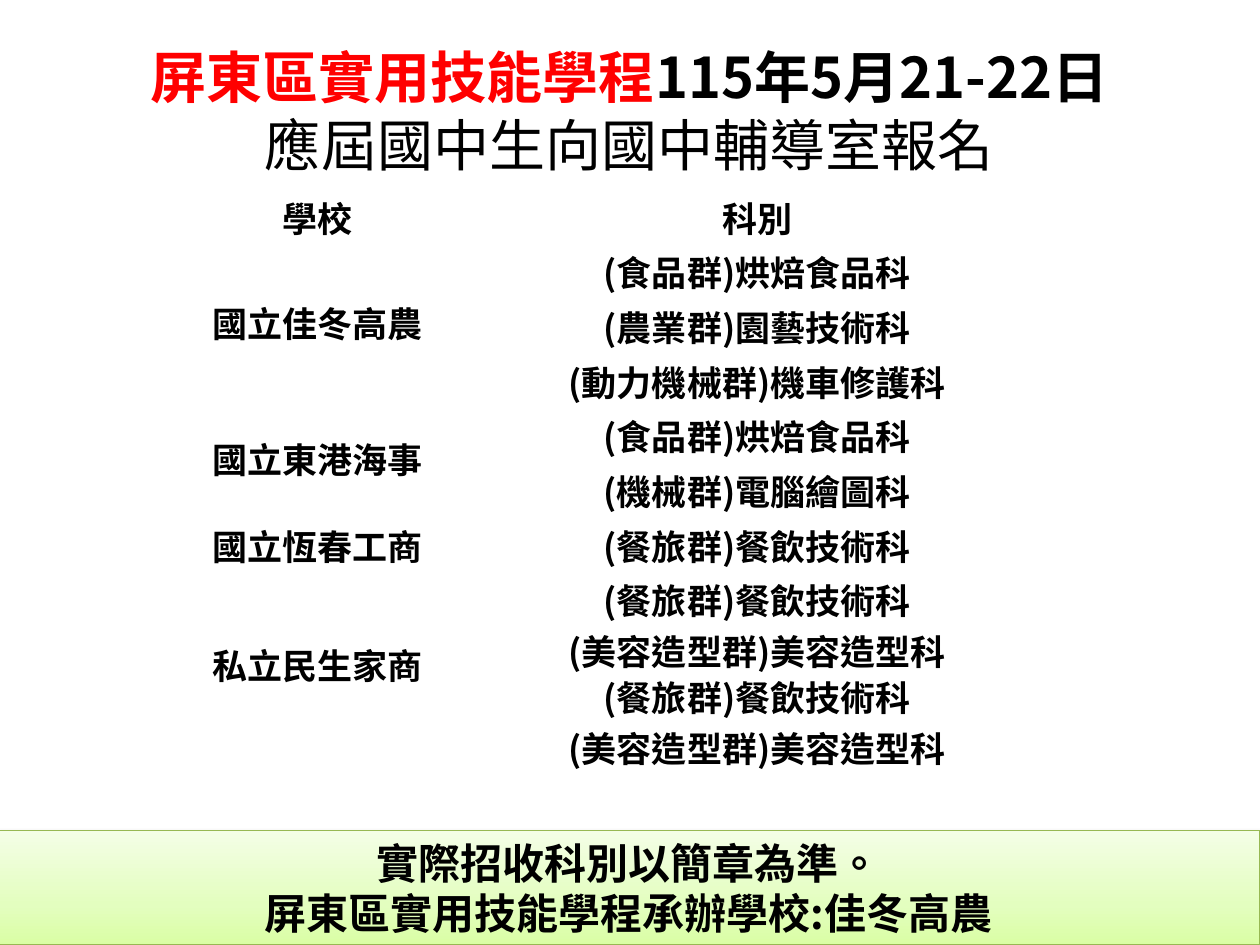
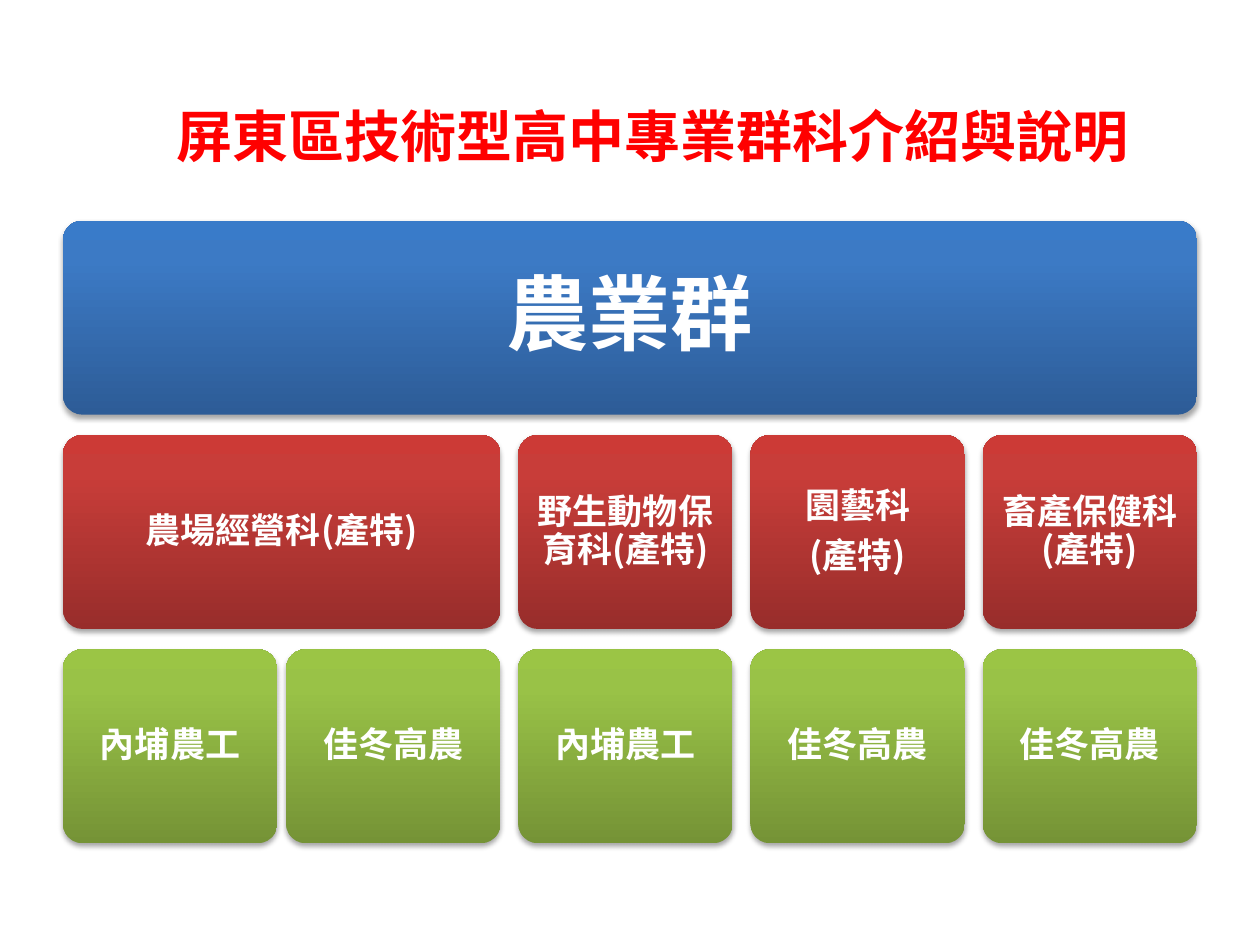
from dataclasses import dataclass

from lxml import etree
from pptx import Presentation
from pptx.dml.color import RGBColor
from pptx.enum import shapes, text
from pptx.oxml.ns import qn
from pptx.util import Cm, Pt

PLAIN = "{2D5ABB26-0587-4C30-8999-92F81FD0307C}"  # table style: no fill, no grid


@dataclass(frozen=True)
class Theme:
    font: str = "Noto Sans CJK TC"
    red: str = "FF0000"
    black: str = "000000"
    white: str = "FFFFFF"
    edge: str = "97B853"
    pale: tuple = ((0, "DAFEA4"), (35, "E3FEBF"), (100, "F4FEE6"))
    blue: tuple = ((0, "2D5C97"), (80, "3C7AC5"), (100, "397BC9"))
    brick: tuple = ((0, "982D2B"), (80, "C83D39"), (100, "CC3A36"))
    green: tuple = ((0, "759336"), (80, "99C247"), (100, "9BC545"))
    title: int = 32
    note: int = 24
    body: int = 20
    huge: int = 47


def node(root, tag, **attrs):
    return etree.SubElement(root, qn(tag), {k: str(v) for k, v in attrs.items()})


def write(frame, paras, size, color, font, bold=True, align="CENTER",
          line=None, gap=0):
    """Fill a frame; a paragraph is a string or a list of (text, changes)."""
    frame.word_wrap = True
    for i, para in enumerate(paras):
        p = frame.paragraphs[0] if i == 0 else frame.add_paragraph()
        p.alignment = getattr(text.PP_ALIGN, align)
        if line:
            p.line_spacing = line
        if i and gap:
            p.space_before = Pt(gap)
        runs = [(para, {})] if isinstance(para, str) else para
        for words, diff in runs:
            run = p.add_run()
            run.text = words
            run.font.size = Pt(size)
            run.font.bold = diff.get("bold", bold)
            run.font.color.rgb = RGBColor.from_string(diff.get("color", color))
            run.font.name = font
            run.font._element.set("lang", "zh-TW")
            node(run.font._element, "a:ea", typeface=font)


class Deck:
    def __init__(self, theme):
        self.theme = theme
        self.show = Presentation()
        self.show.slide_width, self.show.slide_height = Cm(25.4), Cm(19.05)
        self.slide = None

    def page(self):
        self.slide = self.show.slides.add_slide(self.show.slide_layouts[6])

    def title(self, box, paras, **fmt):
        frame = self.slide.shapes.add_textbox(*map(Cm, box)).text_frame
        look = dict(size=self.theme.title, color=self.theme.red,
                    font=self.theme.font)
        write(frame, paras, **(look | fmt))

    def panel(self, box, paras, stops, kind="ROUNDED_RECTANGLE", edge=None,
              pad=None, dist=1.8, alpha=35, **fmt):
        """Add a gradient shape with a soft shadow and centred text."""
        form = getattr(shapes.MSO_SHAPE, kind)
        shape = self.slide.shapes.add_shape(form, *map(Cm, box))
        if kind == "ROUNDED_RECTANGLE":
            shape.adjustments[0] = 0.1
        self.shade(shape, stops)
        if edge:
            shape.line.color.rgb = RGBColor.from_string(edge)
            shape.line.width = Pt(0.75)
        else:
            shape.line.fill.background()
        self.shadow(shape, dist, alpha)
        frame = shape.text_frame
        frame.vertical_anchor = text.MSO_ANCHOR.MIDDLE
        if pad:
            frame.margin_left = frame.margin_right = Cm(pad)
            frame.margin_top = frame.margin_bottom = Cm(pad)
        write(frame, paras, font=self.theme.font, **fmt)

    def shade(self, shape, stops):
        shape.fill.gradient()
        shape.fill.gradient_angle = 90
        group = shape._element.spPr.find(qn("a:gradFill")).find(qn("a:gsLst"))
        for old in list(group):
            group.remove(old)
        for place, color in stops:
            stop = node(group, "a:gs", pos=place * 1000)
            node(stop, "a:srgbClr", val=color)

    def shadow(self, shape, dist, alpha):
        shape.shadow.inherit = False
        effects = shape._element.spPr.find(qn("a:effectLst"))
        cast = node(effects, "a:outerShdw", blurRad=Pt(3.1), dist=Pt(dist),
                    dir=5400000, rotWithShape=0)
        tint = node(cast, "a:srgbClr", val=self.theme.black)
        node(tint, "a:alpha", val=alpha * 1000)

    def table(self, box, widths, height, head, groups):
        """Add a table whose first column merges over each group's rows."""
        count = 1 + sum(len(rows) for _, rows in groups)
        frame = self.slide.shapes.add_table(count, len(widths), *map(Cm, box))
        grid = frame.table
        grid.first_row = grid.horz_banding = False
        next(frame._element.iter(qn("a:tableStyleId"))).text = PLAIN
        for col, width in zip(grid.columns, widths):
            col.width = Cm(width)
        for row in grid.rows:
            row.height = Cm(height)
        for col, words in enumerate(head):
            self.cell(grid.cell(0, col), [words])
        top = 1
        for name, rows in groups:
            first = grid.cell(top, 0)
            if len(rows) > 1:
                first.merge(grid.cell(top + len(rows) - 1, 0))
            self.cell(first, [name])
            for i, lines in enumerate(rows):
                self.cell(grid.cell(top + i, 1), lines)
            top += len(rows)

    def cell(self, cell, paras):
        cell.fill.background()
        cell.vertical_anchor = text.MSO_ANCHOR.MIDDLE
        write(cell.text_frame, paras, self.theme.body, self.theme.black,
              self.theme.font)


def enrol(deck):
    t = deck.theme
    deck.page()
    deck.title((0.08, 0.74, 25.22, 3), [
        [("屏東區實用技能學程", {"color": t.red}), ("115年5月21-22日", {})],
        [("應屆國中生向國中輔導室報名", {"bold": False})],
    ], color=t.black)
    deck.panel((-0.05, 16.74, 25.45, 2.31),
               ["實際招收科別以簡章為準。", "屏東區實用技能學程承辦學校:佳冬高農"],
               t.pale, kind="RECTANGLE", edge=t.edge, dist=1.6, alpha=38,
               size=t.note, color=t.black)
    bake, dine = "(食品群)烘焙食品科", "(餐旅群)餐飲技術科"
    pair = [dine, "(美容造型群)美容造型科"]
    deck.table((3.4, 3.73, 17.73, 11.61), (6, 11.73), 1.04, ("學校", "科別"), [
        ("國立佳冬高農", [[bake], ["(農業群)園藝技術科"], ["(動力機械群)機車修護科"]]),
        ("國立東港海事", [[bake], ["(機械群)電腦繪圖科"]]),
        ("國立恆春工商", [[dine]]),
        ("私立民生家商", [pair, pair]),
    ])


def farming(deck):
    t = deck.theme
    left, top, wide, high = 1.27, 4.45, 4.32, 3.91
    near, far, step = 0.18, 0.36, 4.32
    neipu, jiadong = "內埔農工", "佳冬高農"
    courses = [
        (["農場經營科(產特)"], [neipu, jiadong]),
        (["野生動物保育科(產特)"], [neipu]),
        (["園藝科", "(產特)"], [jiadong]),
        (["畜產保健科(產特)"], [jiadong]),
    ]
    look = dict(color=t.white, line=0.9)
    small = look | dict(size=t.body, pad=0.2, gap=7)

    deck.page()
    deck.title((3.3, 1.93, 22.1, 1.63), ["屏東區技術型高中專業群科介紹與說明"],
               align="LEFT")
    deck.panel((left, top, 25.4 - 2 * left, high), ["農業群"], t.blue,
               size=t.huge, pad=0.51, **look)
    x = left
    for name, schools in courses:
        span = len(schools) * (wide + near) - near
        deck.panel((x, top + step, span, high), name, t.brick, **small)
        for i, school in enumerate(schools):
            deck.panel((x + i * (wide + near), top + 2 * step, wide, high),
                       [school], t.green, **small)
        x += span + far


def main():
    deck = Deck(Theme())
    enrol(deck)
    farming(deck)
    deck.show.save("out.pptx")


if __name__ == "__main__":
    main()
